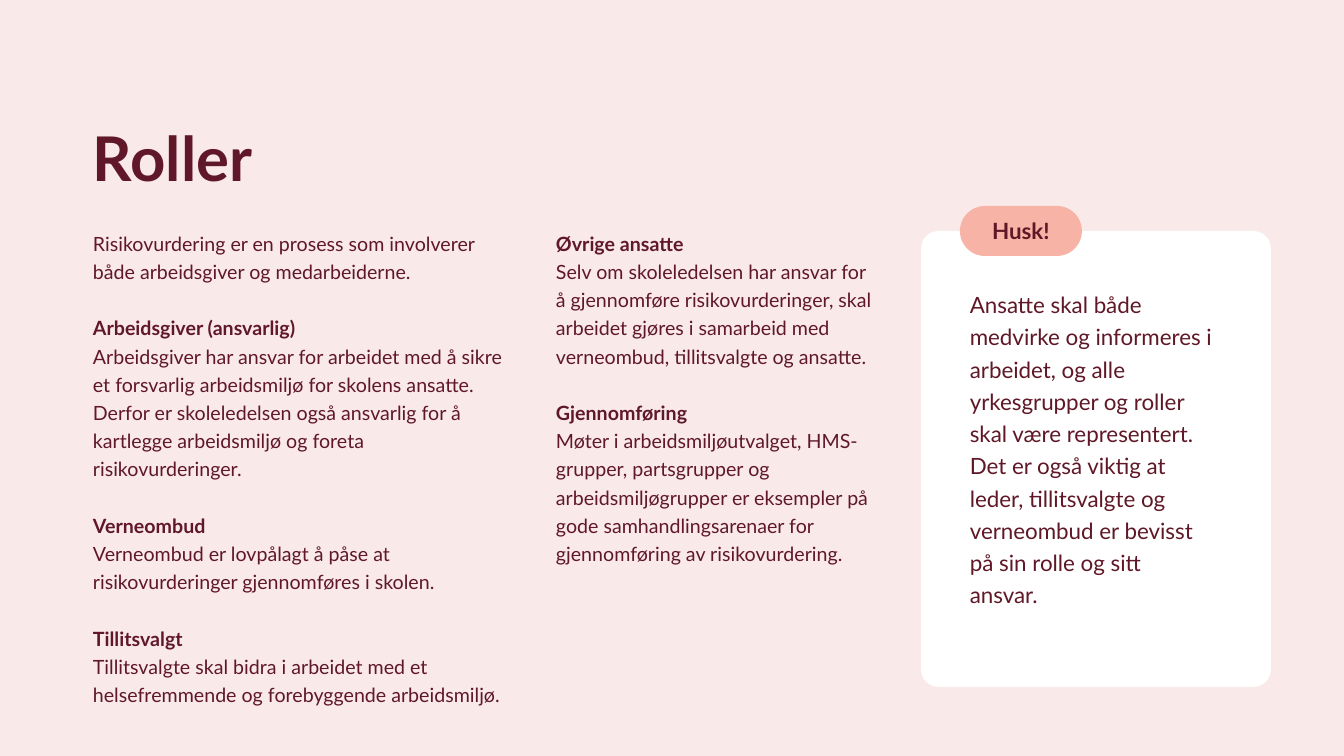
from pptx import Presentation
from pptx import util as u
from pptx.dml.color import RGBColor
from pptx.enum import shapes, text

PX = 914400 / 100.8
COLORS = {"background": "F9E9E8", "wine": "601828", "card": "FFFFFF", "label": "F7B3A6"}


def box(*lengths):
    return [u.Emu(round(length * PX)) for length in lengths]


def style(paragraph, size, bold=False, spacing=1.2, align=text.PP_ALIGN.LEFT):
    paragraph.font.name = "Lato"
    paragraph.font.size = u.Pt(size)
    paragraph.font.bold = bold
    paragraph.font.color.rgb = RGBColor.from_string(COLORS["wine"])
    paragraph.line_spacing = spacing
    paragraph.alignment = align


prs = Presentation()
prs.slide_width, prs.slide_height = box(1344, 756)
slide = prs.slides.add_slide(prs.slide_layouts[5])
slide.background.fill.solid()
slide.background.fill.fore_color.rgb = RGBColor.from_string(COLORS["background"])

# Title
title = slide.shapes.title
title.left, title.top, title.width, title.height = box(93, 54, 1159, 146)
title.text_frame.text = "Roller"
title.text_frame.margin_left = 0
title.text_frame.vertical_anchor = text.MSO_ANCHOR.BOTTOM
title.text_frame.auto_size = text.MSO_AUTO_SIZE.NONE
style(title.text_frame.paragraphs[0], 44, bold=True, spacing=0.9)

# Role columns: each section is a heading and its body
columns = [
    ((93, 222, 434, 521), [
        (None, "Risikovurdering er en prosess som involverer både arbeidsgiver og medarbeiderne."),
        ("Arbeidsgiver (ansvarlig)",
         "Arbeidsgiver har ansvar for arbeidet med å sikre et forsvarlig arbeidsmiljø for skolens "
         "ansatte. Derfor er skoleledelsen også ansvarlig for å kartlegge arbeidsmiljø og foreta "
         "risikovurderinger."),
        ("Verneombud",
         "Verneombud er lovpålagt å påse at risikovurderinger gjennomføres i skolen."),
        ("Tillitsvalgt",
         "Tillitsvalgte skal bidra i arbeidet med et helsefremmende og forebyggende arbeidsmiljø."),
    ]),
    ((556, 222, 326, 351), [
        ("Øvrige ansatte",
         "Selv om skoleledelsen har ansvar for å gjennomføre risikovurderinger, skal arbeidet "
         "gjøres i samarbeid med verneombud, tillitsvalgte og ansatte."),
        ("Gjennomføring",
         "Møter i arbeidsmiljøutvalget, HMS-grupper, partsgrupper og arbeidsmiljøgrupper er "
         "eksempler på gode samhandlingsarenaer for gjennomføring av risikovurdering."),
    ]),
]
for place, sections in columns:
    roles = slide.shapes.add_textbox(*box(*place)).text_frame
    roles.word_wrap = True
    roles.margin_left = 0
    paragraph = roles.paragraphs[0]
    for number, (heading, body) in enumerate(sections):
        if number:
            paragraph = roles.add_paragraph()
            paragraph.space_before = u.Pt(20.16)
        if heading:
            paragraph.text = heading
            style(paragraph, 14, bold=True)
            paragraph = roles.add_paragraph()
        paragraph.text = body
        style(paragraph, 14)

# Reminder card and its label
for place, rounding, color, caption in [
    ((921, 231, 350, 456), 0.05, "card", None),
    ((960, 206, 122, 50), 0.5, "label", "Husk!"),
]:
    panel = slide.shapes.add_shape(shapes.MSO_SHAPE.ROUNDED_RECTANGLE, *box(*place))
    panel.adjustments[0] = rounding
    panel.shadow.inherit = False
    panel.fill.solid()
    panel.fill.fore_color.rgb = RGBColor.from_string(COLORS[color])
    panel.line.fill.background()
    if caption:
        panel.text_frame.text = caption
        panel.text_frame.vertical_anchor = text.MSO_ANCHOR.MIDDLE
        style(panel.text_frame.paragraphs[0], 16, bold=True, spacing=1.0,
              align=text.PP_ALIGN.CENTER)

# Reminder text
reminder = slide.shapes.add_textbox(*box(960, 281, 264, 334)).text_frame
reminder.word_wrap = True
reminder.text = (
    "Ansatte skal både medvirke og informeres i arbeidet, og alle yrkesgrupper og roller skal "
    "være representert. Det er også viktig at leder, tillitsvalgte og verneombud er bevisst på "
    "sin rolle og sitt ansvar."
)
style(reminder.paragraphs[0], 16)

prs.save("out.pptx")
